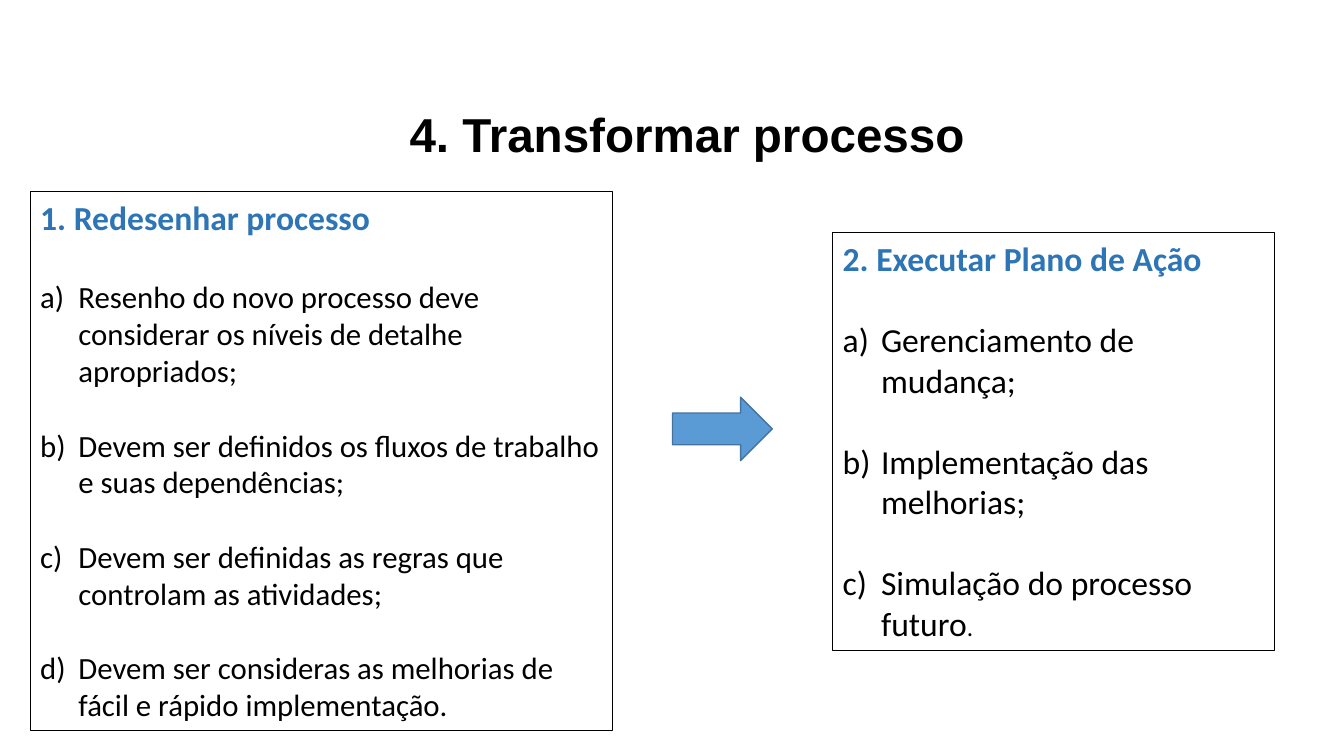
import pptx
import pptx.util
import pptx.dml.color
import pptx.enum.shapes
import pptx.enum.text
import pptx.oxml

Inches = pptx.util.Inches
Pt = pptx.util.Pt
SHAPES = pptx.enum.shapes.MSO_SHAPE


def color(value):
    return pptx.dml.color.RGBColor.from_string(value)


def add_box(page, kind, place, fill, line, width):
    box = page.shapes.add_shape(kind, *[Inches(length) for length in place])
    box.shadow.inherit = False
    if fill:
        box.fill.solid()
        box.fill.fore_color.rgb = color(fill)
    else:
        box.fill.background()
    box.line.color.rgb = color(line)
    box.line.width = Pt(width)
    box.text_frame.word_wrap = True
    return box


deck = pptx.Presentation()
deck.slide_width = Inches(13.33)
deck.slide_height = Inches(7.5)
page = deck.slides.add_slide(deck.slide_layouts[6])

title = add_box(page, SHAPES.RECTANGLE, (0.3, 1.05, 13.03, 0.63), "FFFFFF", "FFFFFF", 0.75)
title.text_frame.vertical_anchor = pptx.enum.text.MSO_ANCHOR.MIDDLE
title.text_frame.text = "4. Transformar processo"
para = title.text_frame.paragraphs[0]
para.alignment = pptx.enum.text.PP_ALIGN.CENTER
para.line_spacing = 0.9
para.font.name = "Arial"
para.font.size = Pt(34)
para.font.bold = True
para.font.color.rgb = color("000000")

steps = [
    ((0.3, 1.9, 5.78, 5.35), "1. Redesenhar processo", 22, [
        ["Resenho do novo processo deve considerar os níveis de detalhe apropriados;"],
        ["Devem ser definidos os fluxos de trabalho e suas dependências;"],
        ["Devem ser definidas as regras que controlam as atividades;"],
        ["Devem ser consideras as melhorias de fácil e rápido implementação."],
    ]),
    ((8.26, 2.31, 4.38, 4.14), "2. Executar Plano de Ação", 24, [
        ["Gerenciamento de mudança;"],
        ["Implementação das melhorias;"],
        ["Simulação do processo futuro", "."],
    ]),
]
heading_size = 24
line_height = 1.22

for place, heading, item_size, items in steps:
    box = add_box(page, SHAPES.RECTANGLE, place, None, "000000", 0.75)
    frame = box.text_frame
    frame.vertical_anchor = pptx.enum.text.MSO_ANCHOR.TOP
    frame.auto_size = pptx.enum.text.MSO_AUTO_SIZE.SHAPE_TO_FIT_TEXT
    frame.text = heading
    para = frame.paragraphs[0]
    para.alignment = pptx.enum.text.PP_ALIGN.LEFT
    para.font.name = "Calibri"
    para.font.size = Pt(heading_size)
    para.font.bold = True
    para.font.color.rgb = color("2E75B6")

    gap_size = heading_size
    for item in items:
        para = frame.add_paragraph()
        properties = para._p.get_or_add_pPr()
        properties.set("marL", str(Inches(0.38)))
        properties.set("indent", str(-Inches(0.38)))
        number = pptx.oxml.parse_xml(
            '<a:buAutoNum xmlns:a="http://schemas.openxmlformats.org/drawingml/2006/main"'
            ' type="alphaLcParenR"/>')
        properties.append(number)
        para.alignment = pptx.enum.text.PP_ALIGN.LEFT
        para.space_before = Pt(gap_size * line_height)
        gap_size = item_size
        for text in item:
            span = para.add_run()
            span.text = text
            span.font.name = "Calibri"
            span.font.size = Pt(18 if text == "." else item_size)
            span.font.bold = False
            span.font.color.rgb = color("000000")

add_box(page, SHAPES.RIGHT_ARROW, (6.67, 3.94, 0.99, 0.63), "5B9BD5", "43739E", 1)

deck.save("out.pptx")
